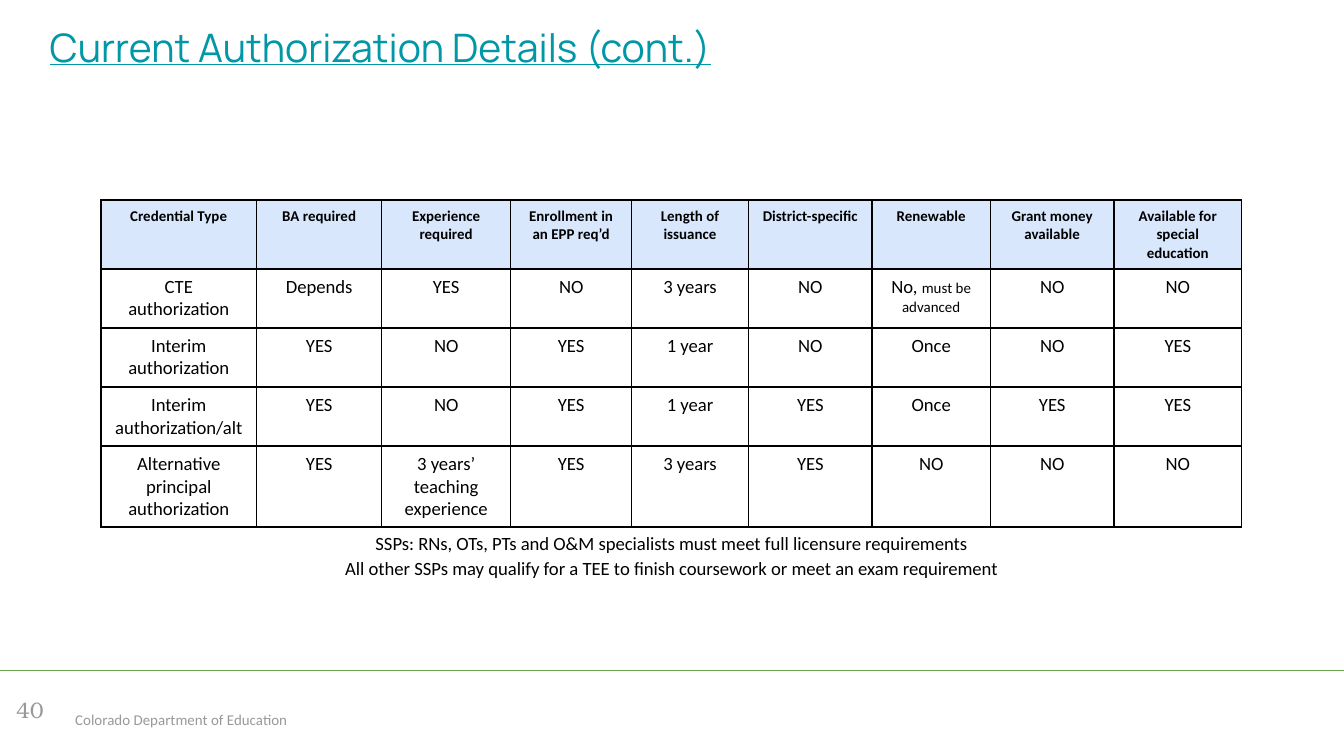
from lxml import etree
from pptx import Presentation
from pptx.dml.color import RGBColor
from pptx.enum.shapes import MSO_CONNECTOR
from pptx.enum.text import MSO_ANCHOR, PP_ALIGN
from pptx.oxml.ns import qn
from pptx.util import Inches, Pt

CENTER, LEFT = PP_ALIGN.CENTER, PP_ALIGN.LEFT
TOP = MSO_ANCHOR.TOP
STRAIGHT = MSO_CONNECTOR.STRAIGHT
BLACK = RGBColor(0x00, 0x00, 0x00)
GRAY = RGBColor(0x99, 0x99, 0x99)
TEAL = RGBColor(0x00, 0x97, 0xA7)
GREEN = RGBColor(0x6A, 0xA8, 0x4F)
PALE_BLUE = RGBColor(0xD9, 0xE7, 0xFD)
BODY_FONT = "Calibri"

TITLE = "Current Authorization Details (cont.)"
FOOTER = "Colorado Department of Education"
PAGE_NUMBER = "40"
NOTES = [
    "SSPs: RNs, OTs, PTs and O&M specialists must meet full licensure requirements",
    "All other SSPs may qualify for a TEE to finish coursework or meet an exam requirement",
]
HEADERS = ["Credential Type", "BA required", "Experience required",
           "Enrollment in an EPP req’d", "Length of issuance", "District-specific",
           "Renewable", "Grant money available", "Available for special education"]
# A tuple holds a main answer followed by a smaller remark.
CREDENTIALS = [
    ["CTE authorization", "Depends", "YES", "NO", "3 years", "NO",
     ("No, ", "must be advanced"), "NO", "NO"],
    ["Interim authorization", "YES", "NO", "YES", "1 year", "NO", "Once", "NO", "YES"],
    ["Interim authorization/alt", "YES", "NO", "YES", "1 year", "YES", "Once", "YES", "YES"],
    ["Alternative principal authorization", "YES", "3 years’ teaching experience",
     "YES", "3 years", "YES", "NO", "NO", "NO"],
]
COLUMN_WIDTHS = [1.16, 0.93, 0.96, 0.9, 0.87, 0.92, 0.88, 0.92, 0.95]
ROW_HEIGHTS = [0.51, 0.44, 0.44, 0.44, 0.6]


def style_font(font, size, color, name=BODY_FONT, bold=False, underline=False):
    font.size = Pt(size)
    font.name = name
    font.color.rgb = color
    font.bold = bold
    font.underline = underline


def add_text(slide, box, lines, size, color, name=BODY_FONT, inset=0,
             alignment=LEFT, line_spacing=1.0, underline=False):
    shape = slide.shapes.add_textbox(*map(Inches, box))
    frame = shape.text_frame
    frame.word_wrap = True
    frame.vertical_anchor = TOP
    frame.margin_left = frame.margin_right = Inches(inset)
    frame.margin_top = frame.margin_bottom = Inches(inset)
    frame.text = "\n".join(lines)
    for paragraph in frame.paragraphs:
        paragraph.alignment = alignment
        paragraph.line_spacing = line_spacing
        for run in paragraph.runs:
            style_font(run.font, size, color, name, underline=underline)


def add_borders(cell, color, width):
    properties = cell._tc.get_or_add_tcPr()
    for position, side in enumerate(("lnL", "lnR", "lnT", "lnB")):
        line = etree.Element(qn(f"a:{side}"), w=str(Pt(width)))
        fill = etree.SubElement(line, qn("a:solidFill"))
        etree.SubElement(fill, qn("a:srgbClr"), val=str(color))
        properties.insert(position, line)


def fill_cell(cell, content, is_header):
    parts = content if isinstance(content, tuple) else (content,)
    paragraph = cell.text_frame.paragraphs[0]
    paragraph.alignment = CENTER
    for index, part in enumerate(parts):
        run = paragraph.add_run()
        run.text = part
        size = 8 if is_header or index > 0 else 10
        style_font(run.font, size, BLACK, bold=is_header)
    if is_header:
        cell.fill.solid()
        cell.fill.fore_color.rgb = PALE_BLUE
    else:
        cell.fill.background()
    add_borders(cell, BLACK, 1)


def add_credential_table(slide, left, top):
    rows = [HEADERS] + CREDENTIALS
    frame = slide.shapes.add_table(
        len(rows), len(HEADERS), Inches(left), Inches(top),
        Inches(sum(COLUMN_WIDTHS)), Inches(sum(ROW_HEIGHTS)))
    table = frame.table
    table.horz_banding = False
    for column, width in zip(table.columns, COLUMN_WIDTHS):
        column.width = Inches(width)
    for row, height in zip(table.rows, ROW_HEIGHTS):
        row.height = Inches(height)
    for row_index, row in enumerate(rows):
        for column_index, content in enumerate(row):
            fill_cell(table.cell(row_index, column_index), content, row_index == 0)


def add_footer_rule(slide, top, width):
    rule = slide.shapes.add_connector(
        STRAIGHT, 0, Inches(top), Inches(width), Inches(top))
    rule.line.color.rgb = GREEN
    rule.line.width = Pt(0.75)
    etree.SubElement(rule._element.spPr, qn("a:effectLst"))


def main():
    presentation = Presentation()
    presentation.slide_width = Inches(10)
    presentation.slide_height = presentation.slide_width * 9 // 16
    slide = presentation.slides.add_slide(presentation.slide_layouts[6])

    add_text(slide, (0.56, 5.29, 3.23, 0.13), [FOOTER], 8, GRAY)
    add_footer_rule(slide, 4.99, 10.01)
    add_text(slide, (0.3, 0.14, 9.32, 0.63), [TITLE], 21, TEAL, "Manrope",
             inset=0.07, line_spacing=0.9, underline=True)
    add_text(slide, (0.12, 5.18, 0.38, 0.31), [PAGE_NUMBER], 12, GRAY, "TeX Gyre Bonum")
    add_credential_table(slide, 0.75, 1.49)
    add_text(slide, (0.75, 3.93, 8.49, 0.53), NOTES, 10, BLACK,
             alignment=CENTER, line_spacing=1.15)

    presentation.save("out.pptx")


if __name__ == "__main__":
    main()
